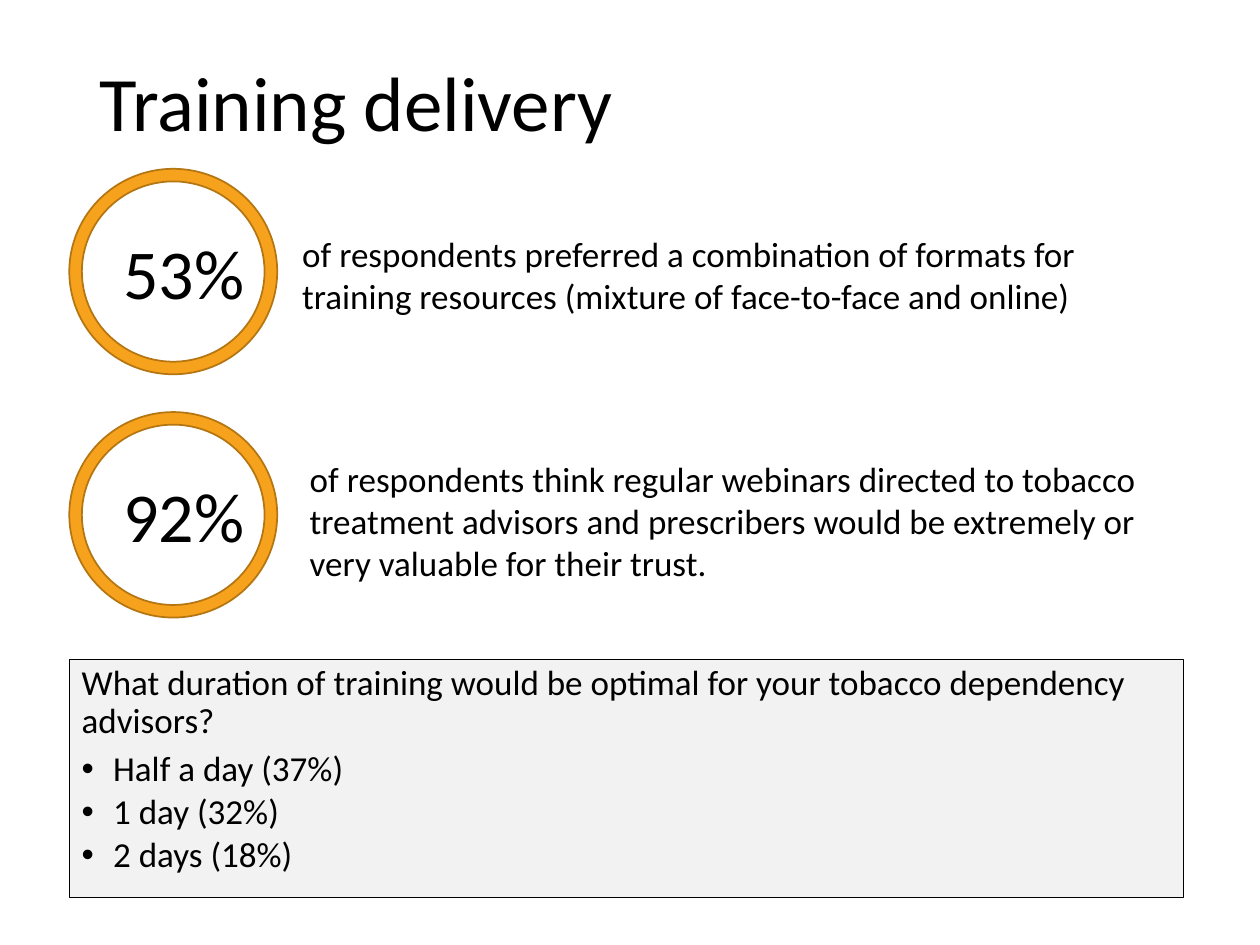
from lxml.etree import SubElement
from pptx import Presentation
from pptx.dml.color import RGBColor
from pptx.enum.shapes import MSO_SHAPE
from pptx.enum.text import MSO_ANCHOR, PP_ALIGN
from pptx.oxml.ns import qn
from pptx.util import Pt

COLORS = {"text": "000000", "ring": "F6A21D", "ring_edge": "B57612", "panel": "F2F2F2"}
FONT = "Calibri"

TITLE = "Training delivery"
# percentage, statement, ring top, statement (left, top, height)
FINDINGS = [
    ("53%", "of respondents preferred a combination of formats for training resources "
     "(mixture of face-to-face and online)", 96.5, (165.6, 129.6, 55.4)),
    ("92%", "of respondents think regular webinars directed to tobacco treatment advisors "
     "and prescribers would be extremely or very valuable for their trust.",
     235.5, (169.9, 257.8, 79.9)),
]
QUESTION = "What duration of training would be optimal for your tobacco dependency advisors?"
DURATIONS = ["Half a day (37%)", "1 day (32%)", "2 days (18%)"]

LEFT = 39.6
RING_WIDTH, RING_HEIGHT, RING_BAND = 118.8, 117.4, 7.2
PERCENT_OFFSET = (23.8, 31)
INDENT = 18


def rgb(name):
    return RGBColor.from_string(COLORS[name])


def add_panel(slide, preset, box, fill, edge, weight):
    panel = slide.shapes.add_shape(preset, *map(Pt, box))
    panel.shadow.inherit = False
    panel.fill.solid()
    panel.fill.fore_color.rgb = rgb(fill)
    panel.line.color.rgb = rgb(edge)
    panel.line.width = Pt(weight)
    return panel


def add_bullet(paragraph):
    properties = paragraph._p.get_or_add_pPr()
    properties.set("marL", str(Pt(INDENT)))
    properties.set("indent", str(-Pt(INDENT)))
    SubElement(properties, qn("a:buFont"), typeface="Arial")
    SubElement(properties, qn("a:buChar"), char="•")


def write(paragraph, text, size=20, spacing=None, after=0, bullet=False):
    paragraph.alignment = PP_ALIGN.LEFT
    paragraph.line_spacing = spacing
    paragraph.space_after = Pt(after)
    if bullet:
        add_bullet(paragraph)
    run = paragraph.add_run()
    run.text = text
    run.font.name = FONT
    run.font.size = Pt(size)
    run.font.color.rgb = rgb("text")


def add_text(slide, box, text, anchor=MSO_ANCHOR.TOP, **style):
    frame = slide.shapes.add_textbox(*map(Pt, box)).text_frame
    frame.word_wrap = True
    frame.vertical_anchor = anchor
    write(frame.paragraphs[0], text, **style)


def add_finding(slide, percent, statement, top, statement_place):
    ring = add_panel(slide, MSO_SHAPE.DONUT, (LEFT, top, RING_WIDTH, RING_HEIGHT),
                     "ring", "ring_edge", 1)
    ring.adjustments[0] = RING_BAND / RING_HEIGHT
    dx, dy = PERCENT_OFFSET
    add_text(slide, (LEFT + dx, top + dy, 83.5, 55.4), percent, size=40)
    left, text_top, height = statement_place
    add_text(slide, (left, text_top, 510.5, height), statement)


def add_durations(slide):
    panel = add_panel(slide, MSO_SHAPE.RECTANGLE, (LEFT, 376.6, 636.5, 136),
                      "panel", "text", 0.25)
    frame = panel.text_frame
    frame.word_wrap = True
    frame.vertical_anchor = MSO_ANCHOR.TOP
    write(frame.paragraphs[0], QUESTION, spacing=0.9, after=6)
    for duration in DURATIONS:
        write(frame.add_paragraph(), duration, spacing=0.9, after=3, bullet=True)


def main():
    deck = Presentation()
    deck.slide_width, deck.slide_height = Pt(720), Pt(540)
    slide = deck.slides.add_slide(deck.slide_layouts[6])
    add_text(slide, (49.7, 8.6, 620.6, 104.4), TITLE,
             anchor=MSO_ANCHOR.MIDDLE, size=44, spacing=0.9)
    for finding in FINDINGS:
        add_finding(slide, *finding)
    add_durations(slide)
    deck.save("out.pptx")


if __name__ == "__main__":
    main()
